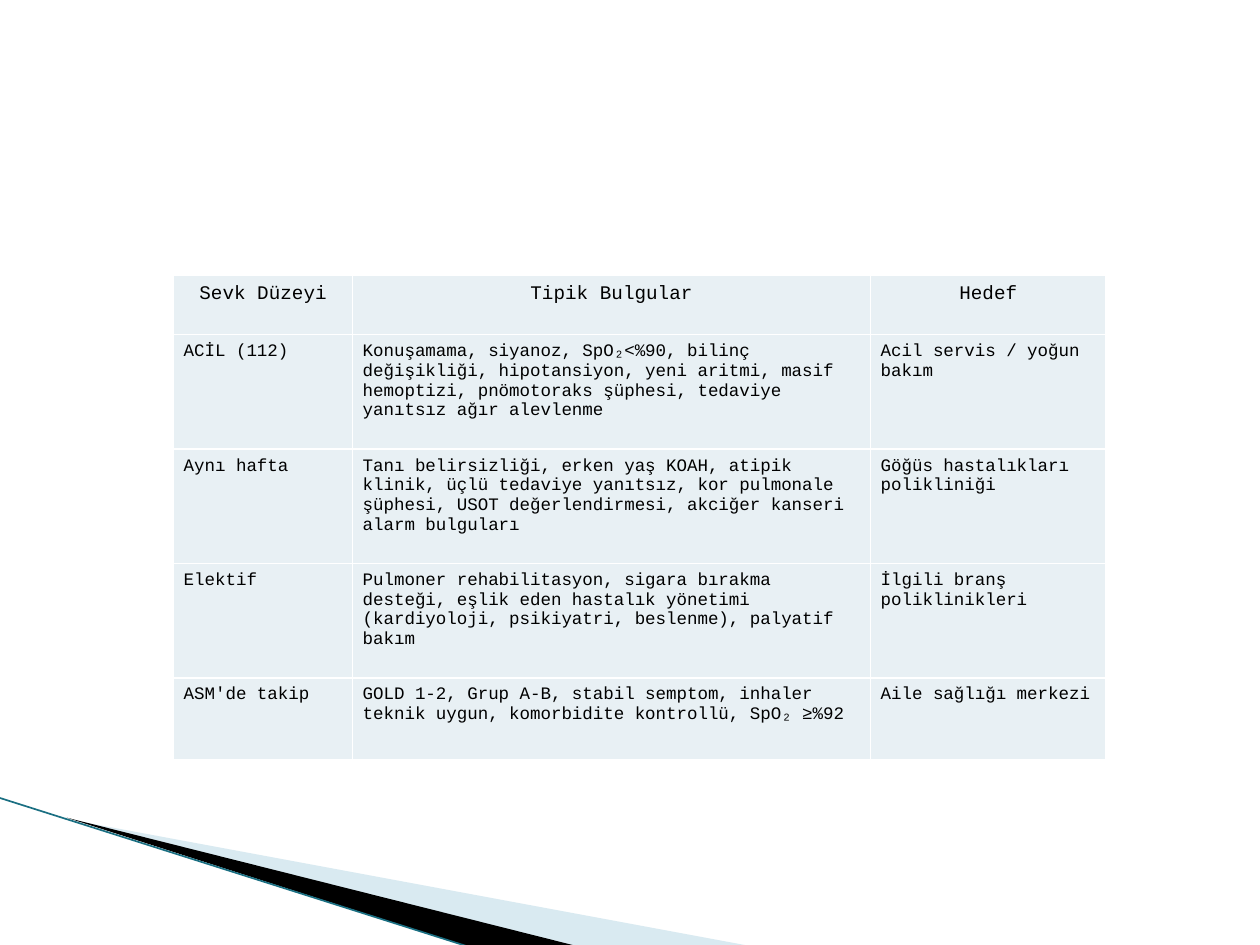
from dataclasses import dataclass

from lxml import etree
from pptx import Presentation
from pptx import util as u
from pptx.dml.color import RGBColor
from pptx.enum import shapes, text
from pptx.oxml.ns import qn


@dataclass(frozen=True)
class Theme:
    font: str = "Courier New"
    head_size: float = 11
    body_size: float = 10
    ink: str = "000000"
    cell: str = "E8F0F4"
    border: str = "FFFFFF"
    pale: str = "A0CBDC"
    edge: str = "1A6F82"


@dataclass(frozen=True)
class Wedge:
    points: tuple[tuple[float, float], ...]
    color: str
    alpha: int = 100


@dataclass(frozen=True)
class CellStyle:
    size: float
    align: text.PP_ALIGN
    inset_y: float
    space_after: float


THEME = Theme()
HEAD = CellStyle(THEME.head_size, text.PP_ALIGN.CENTER, 5, 0)
BODY = CellStyle(THEME.body_size, text.PP_ALIGN.LEFT, 4.3, 2)

WEDGES = (
    Wedge(((39.6, 468.3), (428.4, 540.5), (328.3, 540.5)), THEME.pale, 40),
    Wedge(((38.2, 467.3), (329, 540.5), (267.8, 541)), THEME.ink),
)

COLUMNS = (102.3, 296, 134.5)
ROW_HEIGHTS = (34.2, 65.4, 65.4, 65.4, 47)
ROWS = (
    ("Sevk Düzeyi", "Tipik Bulgular", "Hedef"),
    ("ACİL (112)",
     "Konuşamama, siyanoz, SpO₂<%90, bilinç değişikliği, hipotansiyon, yeni aritmi, "
     "masif hemoptizi, pnömotoraks şüphesi, tedaviye yanıtsız ağır alevlenme",
     "Acil servis / yoğun bakım"),
    ("Aynı hafta",
     "Tanı belirsizliği, erken yaş KOAH, atipik klinik, üçlü tedaviye yanıtsız, "
     "kor pulmonale şüphesi, USOT değerlendirmesi, akciğer kanseri alarm bulguları",
     "Göğüs hastalıkları polikliniği"),
    ("Elektif",
     "Pulmoner rehabilitasyon, sigara bırakma desteği, eşlik eden hastalık yönetimi "
     "(kardiyoloji, psikiyatri, beslenme), palyatif bakım",
     "İlgili branş poliklinikleri"),
    ("ASM'de takip",
     "GOLD 1-2, Grup A-B, stabil semptom, inhaler teknik uygun, "
     "komorbidite kontrollü, SpO₂ ≥%92",
     "Aile sağlığı merkezi"),
)


def rgb(color: str) -> RGBColor:
    return RGBColor.from_string(color)


def draw_wedge(s, wedge: Wedge) -> None:
    start, *rest = [(u.Pt(x), u.Pt(y)) for x, y in wedge.points]
    builder = s.shapes.build_freeform(*start)
    builder.add_line_segments(rest, close=True)
    sp = builder.convert_to_shape()
    sp.shadow.inherit = False
    sp.line.fill.background()
    sp.fill.solid()
    sp.fill.fore_color.rgb = rgb(wedge.color)
    if wedge.alpha < 100:
        clr = sp.fill._xPr.find(f".//{qn('a:srgbClr')}")
        etree.SubElement(clr, qn("a:alpha"), val=str(wedge.alpha * 1000))


def draw_edge(s) -> None:
    line = s.shapes.add_connector(
        shapes.MSO_CONNECTOR.STRAIGHT, u.Pt(-0.7), u.Pt(455.8), u.Pt(267.8), u.Pt(541))
    line.line.color.rgb = rgb(THEME.edge)
    line.line.width = u.Pt(0.95)
    etree.SubElement(line._element.spPr, qn("a:effectLst"))


def add_borders(cell) -> None:
    # Borders come before the fill in the cell properties
    tcPr = cell._tc.get_or_add_tcPr()
    for i, side in enumerate(("lnL", "lnR", "lnT", "lnB")):
        ln = etree.Element(qn(f"a:{side}"), w=str(u.Pt(1)))
        fill = etree.SubElement(ln, qn("a:solidFill"))
        etree.SubElement(fill, qn("a:srgbClr"), val=THEME.border)
        tcPr.insert(i, ln)


def fill_cell(cell, words: str, style: CellStyle) -> None:
    cell.fill.solid()
    cell.fill.fore_color.rgb = rgb(THEME.cell)
    cell.margin_left = cell.margin_right = u.Pt(5.8)
    cell.margin_top = cell.margin_bottom = u.Pt(style.inset_y)
    add_borders(cell)
    p = cell.text_frame.paragraphs[0]
    p.alignment = style.align
    p.space_after = u.Pt(style.space_after)
    r = p.add_run()
    r.text = words
    r.font.name = THEME.font
    r.font.size = u.Pt(style.size)
    r.font.bold = False
    r.font.color.rgb = rgb(THEME.ink)


def draw_table(s) -> None:
    frame = s.shapes.add_table(
        len(ROWS), len(COLUMNS), u.Pt(99.2), u.Pt(157),
        u.Pt(sum(COLUMNS)), u.Pt(sum(ROW_HEIGHTS)))
    table = frame.table
    table.first_row = table.horz_banding = False
    for column, width in zip(table.columns, COLUMNS):
        column.width = u.Pt(width)
    for i, (height, row) in enumerate(zip(ROW_HEIGHTS, ROWS)):
        table.rows[i].height = u.Pt(height)
        for j, words in enumerate(row):
            fill_cell(table.cell(i, j), words, BODY if i else HEAD)


def main() -> None:
    prs = Presentation()
    prs.slide_width, prs.slide_height = u.Pt(720), u.Pt(540)
    s = prs.slides.add_slide(prs.slide_layouts[6])
    # Corner decoration
    for wedge in WEDGES:
        draw_wedge(s, wedge)
    draw_edge(s)
    # Referral table
    draw_table(s)
    prs.save("out.pptx")


if __name__ == "__main__":
    main()
